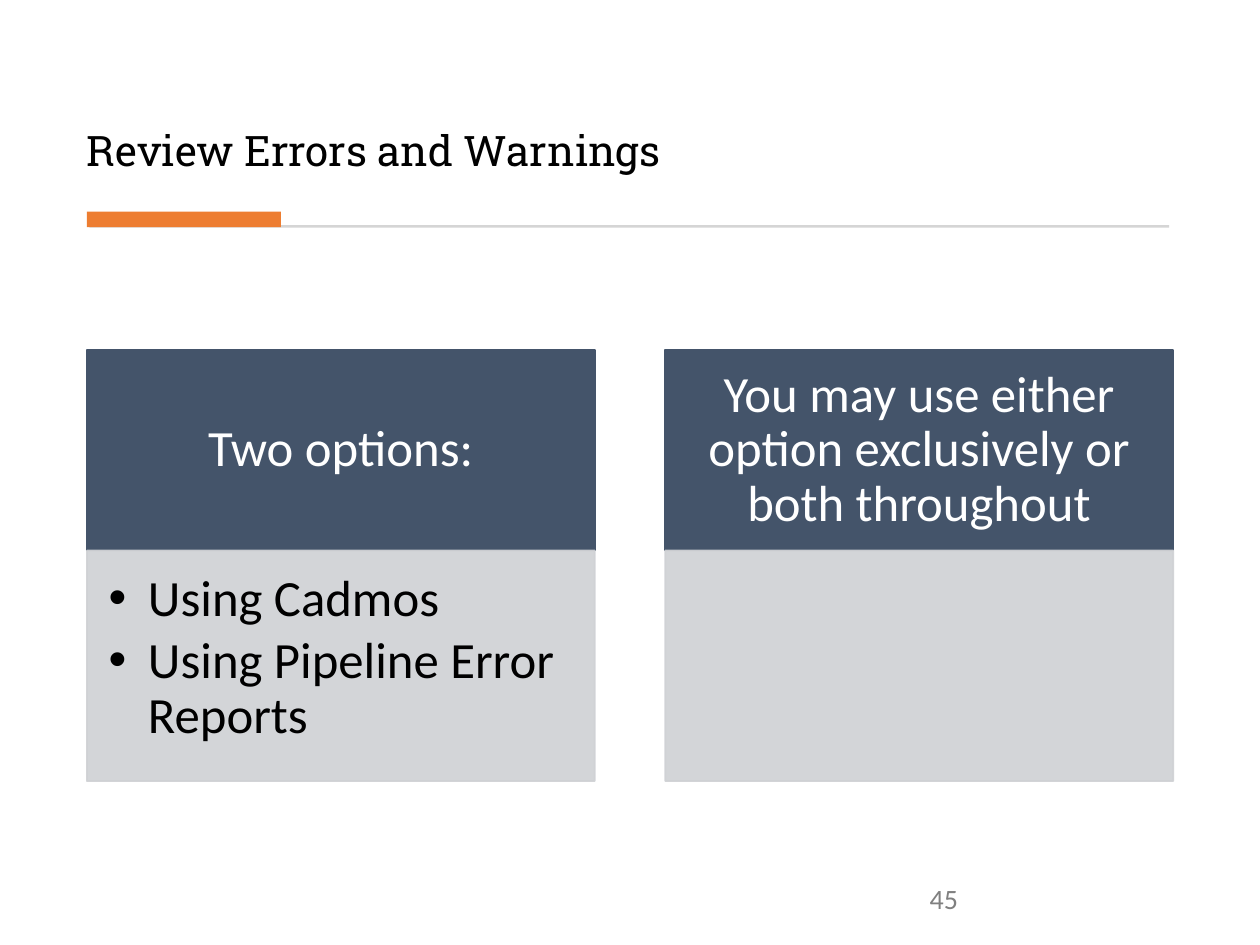
from lxml.etree import SubElement
from pptx import Presentation
from pptx.dml.color import RGBColor
from pptx.enum.shapes import MSO_SHAPE as Shape
from pptx.enum.text import MSO_ANCHOR as Anchor, PP_ALIGN as Align
from pptx.oxml.ns import qn
from pptx.util import Pt

LEFT = 49.7
COLUMN_WIDTH, COLUMN_STEP = 290.2, 330.5
HEADER_TOP, HEADER_HEIGHT, BODY_HEIGHT = 200.2, 114.4, 131.8
NAVY, SILVER, ORANGE, RULE_GRAY = "44546A", "CFD1D4", "ED7D31", "D5D5D5"
COLUMNS = [
    ("Two options:", ["Using Cadmos", "Using Pipeline Error Reports"]),
    ("You may use either option exclusively or both throughout", []),
]


def paint(color_format, color, opacity=100):
    """Apply a hex colour and, below 100, an opacity in percent."""
    color_format.rgb = RGBColor.from_string(color)
    if opacity < 100:
        fill = color_format._xFill
        SubElement(fill.find(qn("a:srgbClr")), qn("a:alpha"), val=str(opacity * 1000))


def set_frame(frame, margins, anchor):
    """Set wrapping, anchor and left, top, right, bottom margins."""
    frame.word_wrap = True
    frame.vertical_anchor = anchor
    frame.margin_left, frame.margin_top, frame.margin_right, frame.margin_bottom = map(Pt, margins)


def style(para, size, color, name="Calibri", align=Align.LEFT, spacing=0.9, after=0):
    """Format one paragraph."""
    para.alignment = align
    para.line_spacing = spacing
    para.space_before, para.space_after = Pt(0), Pt(after)
    para.font.size, para.font.name = Pt(size), name
    paint(para.font.color, color)


def add_bullet(para, indent):
    """Give a paragraph a round bullet with a hanging indent."""
    properties = para._p.get_or_add_pPr()
    properties.set("marL", str(Pt(indent)))
    properties.set("indent", str(-Pt(indent)))
    SubElement(properties, qn("a:buFont"), typeface="Arial")
    SubElement(properties, qn("a:buChar"), char="•")


def add_block(page, left, top, width, height, color, outlined=False, opacity=100):
    """Add a filled rectangle."""
    block = page.shapes.add_shape(Shape.RECTANGLE, Pt(left), Pt(top), Pt(width), Pt(height))
    block.shadow.inherit = False
    block.fill.solid()
    paint(block.fill.fore_color, color, opacity)
    if outlined:
        block.line.width = Pt(1)
        block.line.fill.solid()
        paint(block.line.fill.fore_color, color, opacity)
    else:
        block.line.fill.background()
    return block


def add_title(page, text):
    """Place and format the title placeholder."""
    title = page.shapes.title
    title.left, title.top, title.width, title.height = Pt(LEFT), Pt(20.2), Pt(620.6), Pt(79.9)
    set_frame(title.text_frame, (0, 0, 0, 0), Anchor.BOTTOM)
    title.text_frame.text = text
    style(title.text_frame.paragraphs[0], 24, "000000", "Roboto Slab")


def add_column(page, left, heading, items):
    """Add a dark header with a pale body of bullets below it."""
    header = add_block(page, left, HEADER_TOP, COLUMN_WIDTH, HEADER_HEIGHT, NAVY, True)
    set_frame(header.text_frame, (16.5, 9.4, 16.5, 9.4), Anchor.MIDDLE)
    header.text_frame.text = heading
    style(header.text_frame.paragraphs[0], 29, "FFFFFF", align=Align.CENTER, after=10)

    body = add_block(page, left, HEADER_TOP + HEADER_HEIGHT, COLUMN_WIDTH, BODY_HEIGHT,
                     SILVER, True, 90)
    if items:
        set_frame(body.text_frame, (12.4, 12.4, 16.5, 18), Anchor.TOP)
        body.text_frame.text = "\n".join(items)
        for para in body.text_frame.paragraphs:
            add_bullet(para, 22.5)
            style(para, 29, "000000", after=4.4)


def add_page_number(page, number):
    """Add the page number at the foot."""
    box = page.shapes.add_textbox(Pt(524.2), Pt(500.4), Pt(146.2), Pt(28.8))
    set_frame(box.text_frame, (7.2, 3.6, 7.2, 3.6), Anchor.TOP)
    box.text_frame.text = number
    style(box.text_frame.paragraphs[0], 16, "808080", spacing=1, after=6)


def main():
    """Build and save the deck."""
    deck = Presentation()
    deck.slide_width, deck.slide_height = Pt(720), Pt(540)
    page = deck.slides.add_slide(deck.slide_layouts[5])
    add_title(page, "Review Errors and Warnings")
    add_block(page, 51.1, 128.7, 617, 1.4, RULE_GRAY)
    add_block(page, LEFT, 121, 110.9, 8.8, ORANGE)
    add_page_number(page, "45")
    for index, (heading, items) in enumerate(COLUMNS):
        add_column(page, LEFT + index * COLUMN_STEP, heading, items)
    deck.save("out.pptx")


if __name__ == "__main__":
    main()
